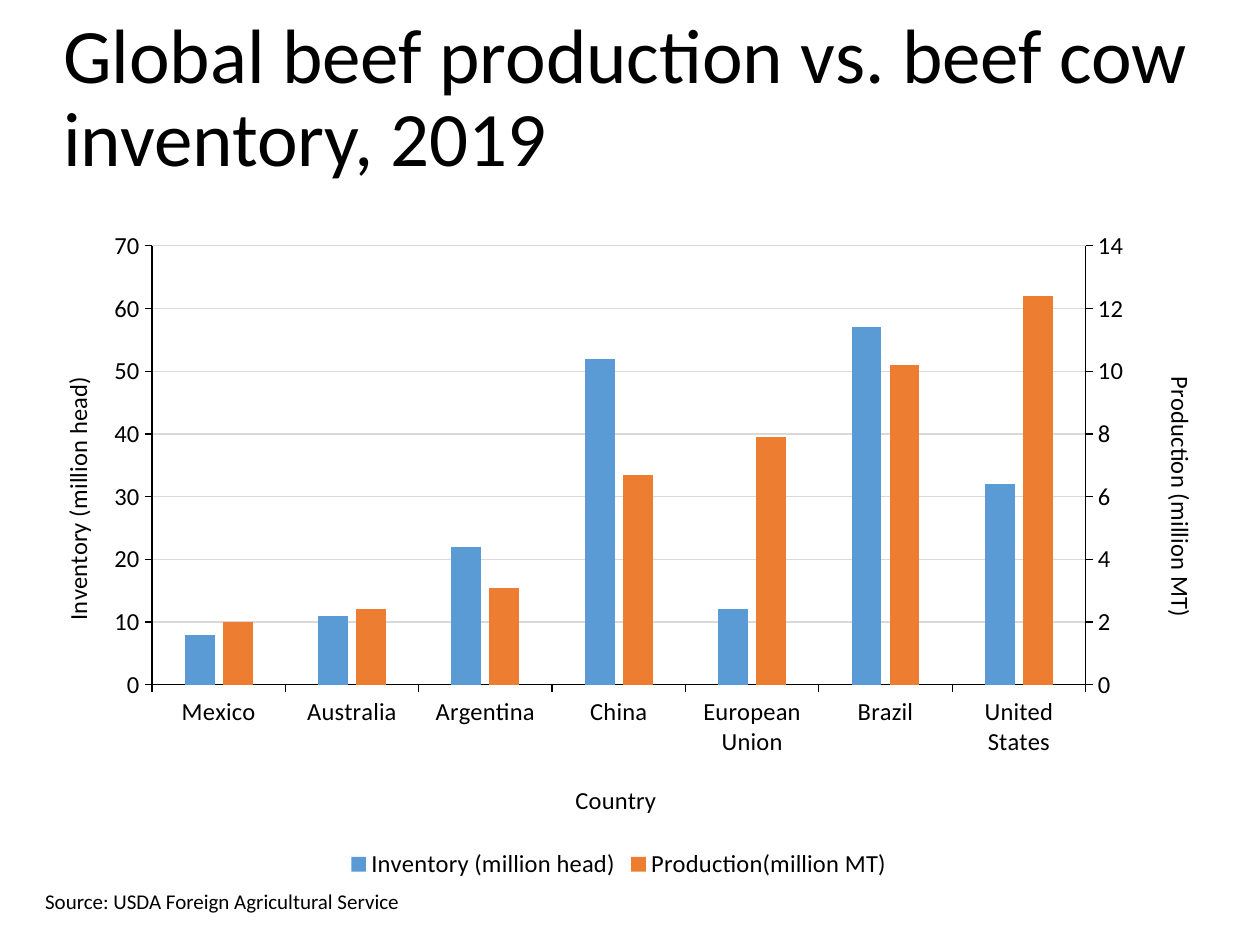
from copy import deepcopy

from pptx import Presentation
from pptx.chart.data import CategoryChartData
from pptx.dml.color import RGBColor
from pptx.enum import chart as charts, text
from pptx.oxml import parse_xml
from pptx.oxml.ns import nsdecls
from pptx.util import Cm, Pt

TITLE = "Global beef production vs. beef cow inventory, 2019"
SOURCE = "Source: USDA Foreign Agricultural Service"
COUNTRIES = ["Mexico", "Australia", "Argentina", "China",
             "European Union", "Brazil", "United States"]
BLANK = [None] * len(COUNTRIES)
# The blank series keep the bars of the two axes side by side.
SERIES = [
    ("Inventory (million head)", [8, 11, 22, 52, 12, 57, 32], "inventory"),
    ("Series 2", BLANK, "production"),
    ("Series 3", BLANK, "spacer"),
    ("Production(million MT)", [2, 2.4, 3.1, 6.7, 7.9, 10.2, 12.4], "production"),
]
PRIMARY_COUNT = 2
HIDDEN_LEGEND_ENTRIES = [1, 2]
AXIS_TITLES = {"country": "Country", "inventory": "Inventory (million head)",
               "production": "Production (million MT)"}

THEME = {
    "font": "Calibri",
    "sizes": {"title": 44, "chart": 14, "source": 12},
    "colours": {"text": "000000", "grid": "D9D9D9", "inventory": "5B9BD5",
                "production": "ED7D31", "spacer": "A5A5A5"},
}
PLACES = {
    "title": (1.02, 0.18, 23.37, 3.68),
    "chart": (0.41, 4.42, 24.13, 13.41),
    "source": (0.66, 17.78, 7.72, 0.76),
}
# Fractions of the chart's width and height
LAYOUTS = {"plot": (0.11, 0.04, 0.78, 0.66), "country": (0.46, 0.84),
           "inventory": (0.03, 0.23), "production": (0.95, 0.23)}


def colour(name):
    return RGBColor.from_string(THEME["colours"][name])


def place(name):
    return [Cm(length) for length in PLACES[name]]


def style_font(font, size_name):
    font.name = THEME["font"]
    font.size = Pt(THEME["sizes"][size_name])
    font.bold = False
    font.color.rgb = colour("text")


def style_line(line, name):
    line.color.rgb = colour(name)
    line.width = Pt(0.75)


def manual_layout(name):
    values = LAYOUTS[name]
    target = '<c:layoutTarget val="inner"/>' if len(values) == 4 else ""
    modes = '<c:xMode val="edge"/><c:yMode val="edge"/>'
    lengths = "".join(f'<c:{key} val="{value}"/>' for key, value in zip("xywh", values))
    return parse_xml(f'<c:layout {nsdecls("c")}><c:manualLayout>{target}{modes}'
                     f'{lengths}</c:manualLayout></c:layout>')


def drop(element, query):
    for child in element.xpath(query):
        child.getparent().remove(child)


def style_axis(axis, name):
    style_font(axis.tick_labels.font, "chart")
    style_line(axis.format.line, "text")
    axis.major_tick_mark = charts.XL_TICK_MARK.OUTSIDE
    axis.minor_tick_mark = charts.XL_TICK_MARK.NONE
    frame = axis.axis_title.text_frame
    frame.text = AXIS_TITLES[name]
    style_font(frame.paragraphs[0].runs[0].font, "chart")
    title = axis.axis_title._element
    drop(title, "c:layout")
    title.xpath("c:tx")[0].addnext(manual_layout(name))


def style_value_axis(axis, name, top, step):
    axis.minimum_scale, axis.maximum_scale, axis.major_unit = 0, top, step
    style_axis(axis, name)


def rotate_title(axis_element, degrees):
    body = axis_element.xpath("c:title//a:bodyPr")[0]
    body.set("rot", str(degrees * 60000))
    body.set("vert", "horz")


def set_value(element, query, value):
    element.xpath(query)[0].set("val", value)


def add_right_axis(chart):
    """Move the later series to a second bar group with its own value axis."""
    area = chart._chartSpace.xpath("c:chart/c:plotArea")[0]
    bars = area.xpath("c:barChart")[0]
    right_bars = deepcopy(bars)
    drop(bars, f"c:ser[position()>{PRIMARY_COUNT}]")
    drop(right_bars, f"c:ser[position()<={PRIMARY_COUNT}]")
    bars.addnext(right_bars)

    category = area.xpath("c:catAx")[0]
    value = area.xpath("c:valAx")[0]
    right_category, right_value = deepcopy(category), deepcopy(value)
    ids = ["50010", "50020"]
    for reference, axis_id in zip(right_bars.xpath("c:axId"), ids):
        reference.set("val", axis_id)
    for axis, own, other in ((right_category, *ids), (right_value, *ids[::-1])):
        set_value(axis, "c:axId", own)
        set_value(axis, "c:crossAx", other)
    set_value(right_category, "c:delete", "1")
    drop(right_category, "c:title")
    drop(right_value, "c:majorGridlines")
    set_value(right_value, "c:axPos", "r")
    set_value(right_value, "c:crosses", "max")
    value.addnext(right_value)
    right_value.addnext(right_category)

    style_value_axis(type(chart.value_axis)(right_value), "production", 14, 2)
    rotate_title(value, -90)
    rotate_title(right_value, 90)
    drop(area, "c:layout")
    area.insert(0, manual_layout("plot"))


def add_chart(page):
    data = CategoryChartData()
    data.categories = COUNTRIES
    for name, values, _ in SERIES:
        data.add_series(name, values)
    chart = page.shapes.add_chart(
        charts.XL_CHART_TYPE.COLUMN_CLUSTERED, *place("chart"), data).chart
    style_font(chart.font, "chart")
    chart.has_title = False
    plot = chart.plots[0]
    plot.gap_width, plot.overlap, plot.vary_by_categories = 219, -27, False
    for series, (_, _, fill_name) in zip(plot.series, SERIES):
        series.format.fill.solid()
        series.format.fill.fore_color.rgb = colour(fill_name)

    style_axis(chart.category_axis, "country")
    style_value_axis(chart.value_axis, "inventory", 70, 10)
    chart.value_axis.tick_labels.number_format = "#,##0"
    chart.value_axis.tick_labels.number_format_is_linked = False
    style_line(chart.value_axis.major_gridlines.format.line, "grid")
    add_right_axis(chart)

    chart.has_legend = True
    legend = chart.legend
    legend.position = charts.XL_LEGEND_POSITION.BOTTOM
    legend.include_in_layout = False
    style_font(legend.font, "chart")
    position = legend._element.xpath("c:legendPos")[0]
    for index in reversed(HIDDEN_LEGEND_ENTRIES):
        position.addnext(parse_xml(
            f'<c:legendEntry {nsdecls("c")}><c:idx val="{index}"/>'
            '<c:delete val="1"/></c:legendEntry>'))


def add_title(page):
    title = page.shapes.title
    title.left, title.top, title.width, title.height = place("title")
    frame = title.text_frame
    frame.text = TITLE
    frame.auto_size = text.MSO_AUTO_SIZE.NONE
    frame.vertical_anchor = text.MSO_ANCHOR.MIDDLE
    para = frame.paragraphs[0]
    para.alignment = text.PP_ALIGN.LEFT
    para.line_spacing = 0.9
    style_font(para.runs[0].font, "title")


def add_source(page):
    frame = page.shapes.add_textbox(*place("source")).text_frame
    frame.text = SOURCE
    frame.word_wrap = False
    frame.auto_size = text.MSO_AUTO_SIZE.SHAPE_TO_FIT_TEXT
    style_font(frame.paragraphs[0].runs[0].font, "source")


def main():
    deck = Presentation()
    deck.slide_width, deck.slide_height = Cm(25.4), Cm(19.05)
    page = deck.slides.add_slide(deck.slide_layouts.get_by_name("Title Only"))
    add_title(page)
    add_chart(page)
    add_source(page)
    deck.save("out.pptx")


if __name__ == "__main__":
    main()
